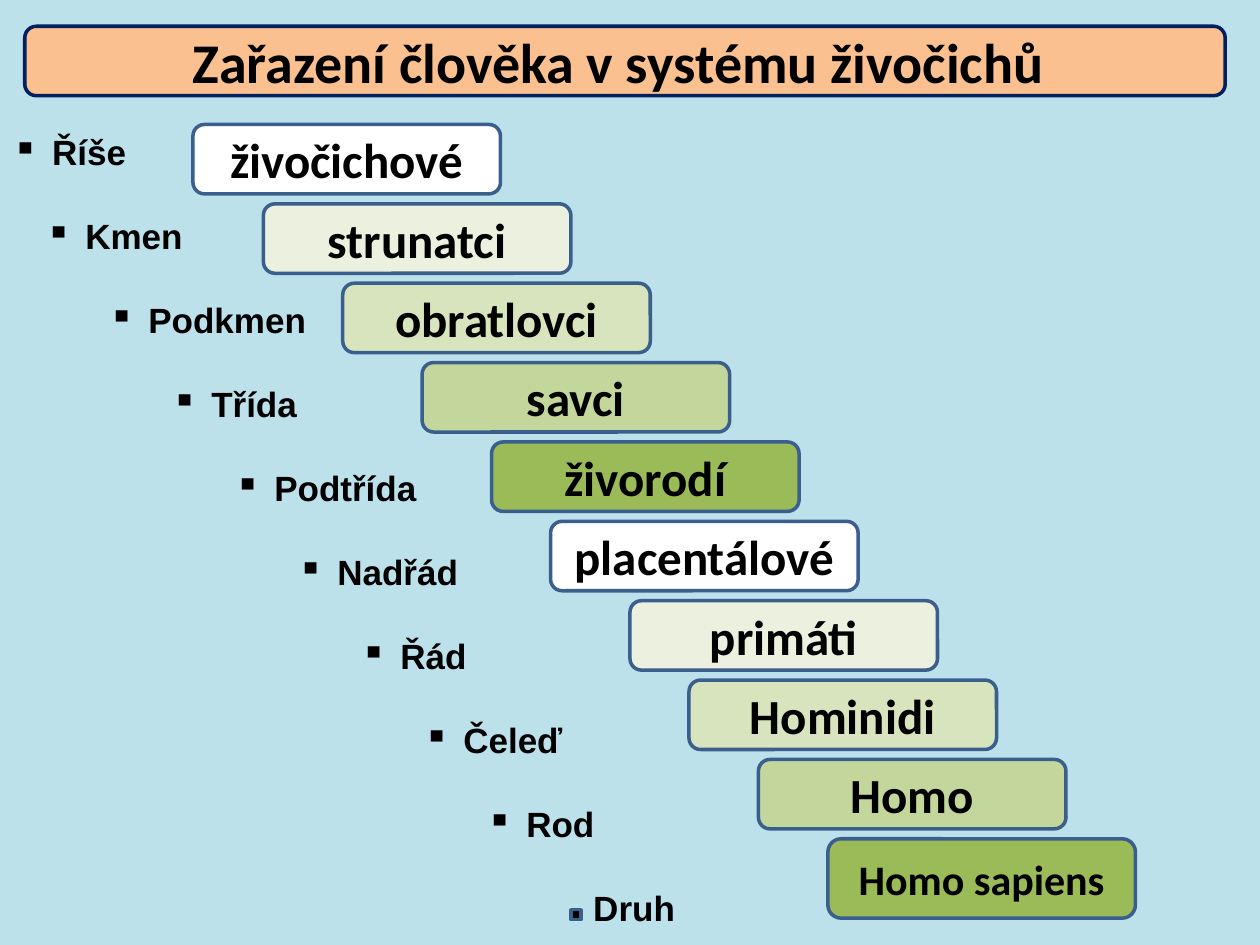
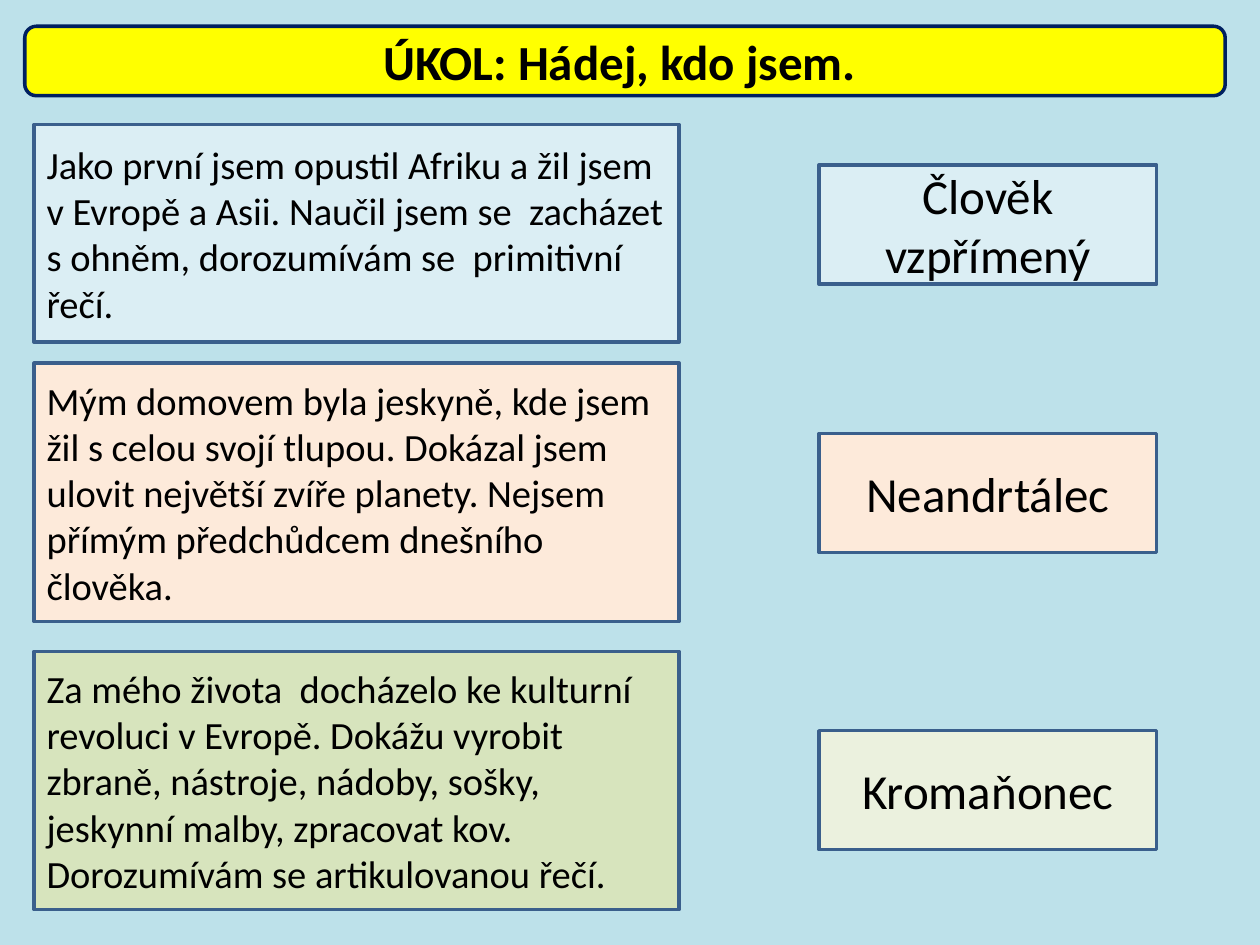
import itertools

import pptx
import pptx.dml.color
import pptx.enum.shapes
import pptx.enum.text
import pptx.oxml.ns
import pptx.util
from lxml import etree

Cm, Pt = pptx.util.Cm, pptx.util.Pt
SHAPE = pptx.enum.shapes.MSO_SHAPE
ALIGN = pptx.enum.text.PP_ALIGN
MIDDLE = pptx.enum.text.MSO_ANCHOR.MIDDLE

COLORS = {
    "background": "BDE1EA", "text": "000000", "edge": "3A5F8C", "navy": "002060",
    "orange": "FAC090", "yellow": "FFFF00", "white": "FFFFFF", "pale": "EBF1DE",
    "light": "D7E4BD", "mid": "C3D69B", "green": "9BBB59", "blue": "DBEEF4",
    "peach": "FDEADA",
}
GREENS = ["white", "pale", "light", "mid", "green"]

RANKS = ["Říše", "Kmen", "Podkmen", "Třída", "Podtřída", "Nadřád", "Řád", "Čeleď", "Rod", "Druh"]
TAXA = [
    ("živočichové", 3.89), ("strunatci", 5.31), ("obratlovci", 6.91), ("savci", 8.51),
    ("živorodí", 9.91), ("placentálové", 11.1), ("primáti", 12.7), ("Hominidi", 13.89),
    ("Homo", 15.29), ("Homo sapiens", 16.69),
]
RIDDLES = [
    ("Jako první jsem opustil Afriku a žil jsem v Evropě a Asii. Naučil jsem se  zacházet "
     "s ohněm, dorozumívám se  primitivní řečí.", "blue", 2.51, 4.39),
    ("Mým domovem byla jeskyně, kde jsem žil s celou svojí tlupou. Dokázal jsem ulovit "
     "největší zvíře planety. Nejsem přímým předchůdcem dnešního člověka.", "peach", 7.32, 5.21),
    ("Za mého života  docházelo ke kulturní revoluci v Evropě. Dokážu vyrobit zbraně, nástroje, "
     "nádoby, sošky, jeskynní malby, zpracovat kov. Dorozumívám se artikulovanou řečí.",
     "light", 13.13, 5.21),
]
ANSWERS = [
    ("Člověk vzpřímený", "blue", 3.33),
    ("Neandrtálec", "peach", 8.74),
    ("Kromaňonec", "pale", 14.73),
]


def rgb(name):
    return pptx.dml.color.RGBColor.from_string(COLORS[name])


def apply(target, values):
    for name, value in values.items():
        setattr(target, name, value)


class Deck:
    """Holds the presentation, its style and the current slide."""

    def __init__(self):
        self.prs = pptx.Presentation()
        apply(self.prs, {"slide_width": Cm(25.4), "slide_height": Cm(19.05)})
        self.s = None

    def slide(self, title, fill, size):
        self.s = self.prs.slides.add_slide(self.prs.slide_layouts[6])
        self.s.background.fill.solid()
        self.s.background.fill.fore_color.rgb = rgb("background")
        self.box((0.5, 0.53, 24.2, 1.4), fill, title, size, bold=True, rounded=True, edge="navy")

    def run(self, p, text, size, bold=False, font="Calibri"):
        r = p.add_run()
        r.text = text
        apply(r.font, {"name": font, "size": Pt(size), "bold": bold})
        r.font.color.rgb = rgb("text")

    def box(self, at, fill, text="", size=28, bold=False, rounded=False, edge="edge",
            align=ALIGN.CENTER):
        kind = SHAPE.ROUNDED_RECTANGLE if rounded else SHAPE.RECTANGLE
        sp = self.s.shapes.add_shape(kind, *map(Cm, at))
        sp.shadow.inherit = False
        sp.fill.solid()
        sp.fill.fore_color.rgb = rgb(fill)
        sp.line.color.rgb = rgb(edge)
        sp.line.width = Pt(2)
        tf = sp.text_frame
        apply(tf, {"word_wrap": True, "vertical_anchor": MIDDLE})
        p = tf.paragraphs[0]
        p.alignment = align
        if text:
            self.run(p, text, size, bold)

    def bullet(self, p, margin, hang, char):
        pPr = p._p.get_or_add_pPr()
        pPr.set("marL", str(Cm(margin)))
        pPr.set("indent", str(-Cm(hang)))
        tag = "a:buChar" if char else "a:buNone"
        bu = etree.SubElement(pPr, pptx.oxml.ns.qn(tag))
        if char:
            bu.set("char", char)

    def staircase(self, at, labels):
        tf = self.s.shapes.add_textbox(*map(Cm, at)).text_frame
        tf.word_wrap = True
        for i, label in enumerate(labels):
            p = tf.paragraphs[0] if i == 0 else tf.add_paragraph()
            apply(p, {"level": min(i, 8), "line_spacing": Pt(24), "space_after": Pt(24)})
            last = i == len(labels) - 1
            margin = 11.71 if last else max(0.8, 0.2 + 1.27 * i)
            self.bullet(p, margin, 0 if last else 0.8, "" if last else "▪")
            self.run(p, label, 20, bold=True, font="Arial")


def main():
    deck = Deck()

    deck.slide("Zařazení člověka v systému živočichů ", "orange", 32)
    deck.staircase((0, 2.51, 20.7, 16.54), RANKS)
    for i, ((taxon, left), fill) in enumerate(zip(TAXA, itertools.cycle(GREENS))):
        last = i == len(TAXA) - 1
        deck.box((left, 2.51 + 1.6 * i, 6.2, 1.6 if last else 1.4), fill, taxon,
                 24 if last else 28, bold=True, rounded=True)
    deck.box((11.51, 18.34, 0.2, 0.2), "text")

    deck.slide("ÚKOL: Hádej, kdo jsem. ", "yellow", 28)
    for riddle, fill, top, height in RIDDLES:
        deck.box((0.69, top, 13, height), fill, riddle, 22, align=ALIGN.LEFT)
    for answer, fill, top in ANSWERS:
        deck.box((16.51, top, 6.81, 2.4), fill, answer)

    deck.prs.save("out.pptx")


if __name__ == "__main__":
    main()
